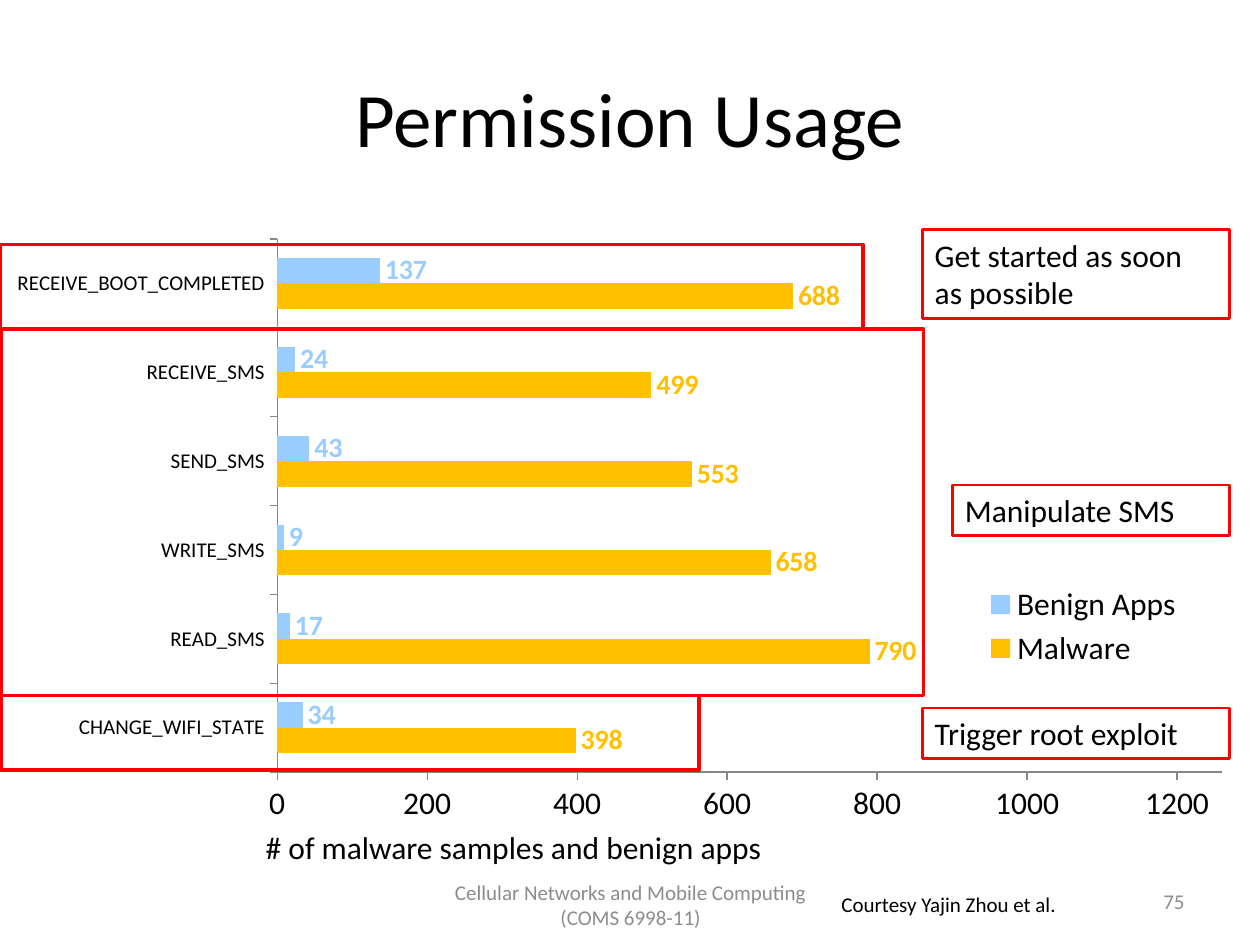
from lxml import etree
from pptx import Presentation
from pptx.chart.data import CategoryChartData
from pptx.dml.color import RGBColor
from pptx.enum.chart import XL_CHART_TYPE, XL_LABEL_POSITION, XL_LEGEND_POSITION, XL_TICK_MARK
from pptx.enum.shapes import MSO_SHAPE
from pptx.enum.text import MSO_ANCHOR, PP_ALIGN
from pptx.oxml.ns import qn
from pptx.util import Inches, Pt

FONT = "Calibri"
BLACK = RGBColor(0x00, 0x00, 0x00)
GRAY = RGBColor(0x8C, 0x8C, 0x8C)
AXIS_GRAY = RGBColor(0x86, 0x86, 0x86)
RED = RGBColor(0xFF, 0x00, 0x00)
AMBER = RGBColor(0xFF, 0xC0, 0x00)
SKY = RGBColor(0x99, 0xCC, 0xFF)

PERMISSIONS = ["CHANGE_WIFI_STATE", "READ_SMS", "WRITE_SMS", "SEND_SMS",
               "RECEIVE_SMS", "RECEIVE_BOOT_COMPLETED"]
SERIES = [
    ("Malware", [398, 790, 658, 553, 499, 688], AMBER),
    ("Benign Apps", [34, 17, 9, 43, 24, 137], SKY),
]
GROUP_FRAMES = [(0, 1.94, 6.85, 0.67), (0.01, 2.61, 7.32, 2.91), (0.01, 5.52, 5.54, 0.59)]
CALLOUTS = [
    ("Get started as soon\nas possible", (7.32, 1.82, 2.44, 0.71)),
    ("Manipulate SMS", (7.56, 3.85, 2.2, 0.4)),
    ("Trigger root exploit", (7.32, 5.62, 2.44, 0.4)),
]


def set_font(font, size, color=BLACK, bold=False):
    font.name = FONT
    font.size = Pt(size)
    font.bold = bold
    font.color.rgb = color


def write_text(sp, text, size=18, color=BLACK, align=PP_ALIGN.LEFT,
               anchor=MSO_ANCHOR.TOP, wrap=True):
    tf = sp.text_frame
    tf.word_wrap = wrap
    tf.vertical_anchor = anchor
    tf.text = text
    for p in tf.paragraphs:
        p.alignment = align
        set_font(p.font, size, color)


def add_text(s, text, box, **fmt):
    write_text(s.shapes.add_textbox(*map(Inches, box)), text, **fmt)


def add_frame(s, box, width):
    """Add an unfilled red rectangle."""
    sp = s.shapes.add_shape(MSO_SHAPE.RECTANGLE, *map(Inches, box))
    sp.shadow.inherit = False
    sp.fill.background()
    sp.line.color.rgb = RED
    sp.line.width = Pt(width)
    return sp


def set_layout(parent, x, y, w, h, inner=False):
    """Place a chart part by fractions of the chart's size."""
    for old in parent.findall(qn("c:layout")):
        parent.remove(old)
    layout = etree.Element(qn("c:layout"))
    manual = etree.SubElement(layout, qn("c:manualLayout"))
    values = [("layoutTarget", "inner")] if inner else []
    values += [("xMode", "edge"), ("yMode", "edge"), ("x", x), ("y", y), ("w", w), ("h", h)]
    for tag, value in values:
        etree.SubElement(manual, qn(f"c:{tag}")).set("val", str(value))
    legend_pos = parent.find(qn("c:legendPos"))
    parent.insert(0 if legend_pos is None else 1, layout)


def style_axis(axis, size):
    axis.has_major_gridlines = False
    axis.major_tick_mark = XL_TICK_MARK.OUTSIDE
    axis.minor_tick_mark = XL_TICK_MARK.NONE
    axis.format.line.color.rgb = AXIS_GRAY
    axis.format.line.width = Pt(0.75)
    set_font(axis.tick_labels.font, size)


def style_series(series, color):
    series.format.fill.solid()
    series.format.fill.fore_color.rgb = color
    labels = series.data_labels
    labels.show_value = True
    labels.position = XL_LABEL_POSITION.OUTSIDE_END
    set_font(labels.font, 16, color, bold=True)


def add_permission_chart(s, box):
    data = CategoryChartData()
    data.categories = PERMISSIONS
    for name, values, _ in SERIES:
        data.add_series(name, values)
    chart = s.shapes.add_chart(XL_CHART_TYPE.BAR_CLUSTERED, *map(Inches, box), data).chart
    chart.has_title = False
    set_font(chart.font, 18)
    style_axis(chart.category_axis, 12)
    style_axis(chart.value_axis, 18)
    chart.value_axis.minimum_scale = 0
    chart.value_axis.maximum_scale = 1260
    chart.value_axis.major_unit = 200

    plot = chart.plots[0]
    plot.gap_width = 150
    plot.overlap = 0
    plot.vary_by_categories = False
    for series, (_, _, color) in zip(plot.series, SERIES):
        style_series(series, color)
    set_layout(chart._chartSpace.chart.plotArea, 0.22, 0.03, 0.75, 0.86, inner=True)

    chart.has_legend = True
    chart.legend.position = XL_LEGEND_POSITION.RIGHT
    chart.legend.include_in_layout = False
    set_font(chart.legend.font, 18)
    set_layout(chart.legend._element, 0.77, 0.58, 0.18, 0.15)


def main():
    prs = Presentation()
    prs.slide_width = Inches(10)
    prs.slide_height = Inches(7.5)
    s = prs.slides.add_slide(prs.slide_layouts[6])

    add_text(s, "Permission Usage", (0.5, 0.3, 9, 1.25), size=44,
             align=PP_ALIGN.CENTER, anchor=MSO_ANCHOR.MIDDLE)
    add_text(s, "75", (7.17, 6.95, 2.33, 0.4), size=12, color=GRAY,
             align=PP_ALIGN.RIGHT, anchor=MSO_ANCHOR.MIDDLE)
    add_permission_chart(s, (0, 1.75, 10, 4.92))
    for box in GROUP_FRAMES:
        add_frame(s, box, 2)
    for text, box in CALLOUTS:
        write_text(add_frame(s, box, 1.5), text)
    add_text(s, "# of malware samples and benign apps", (2.01, 6.52, 6.22, 0.4))
    add_text(s, "Cellular Networks and Mobile Computing (COMS 6998-11)",
             (3.42, 6.98, 3.17, 0.4), size=12, color=GRAY,
             align=PP_ALIGN.CENTER, anchor=MSO_ANCHOR.MIDDLE)
    add_text(s, "Courtesy Yajin Zhou et al.", (6.58, 7.03, 1.94, 0.3), size=12, wrap=False)
    prs.save("out.pptx")


if __name__ == "__main__":
    main()
